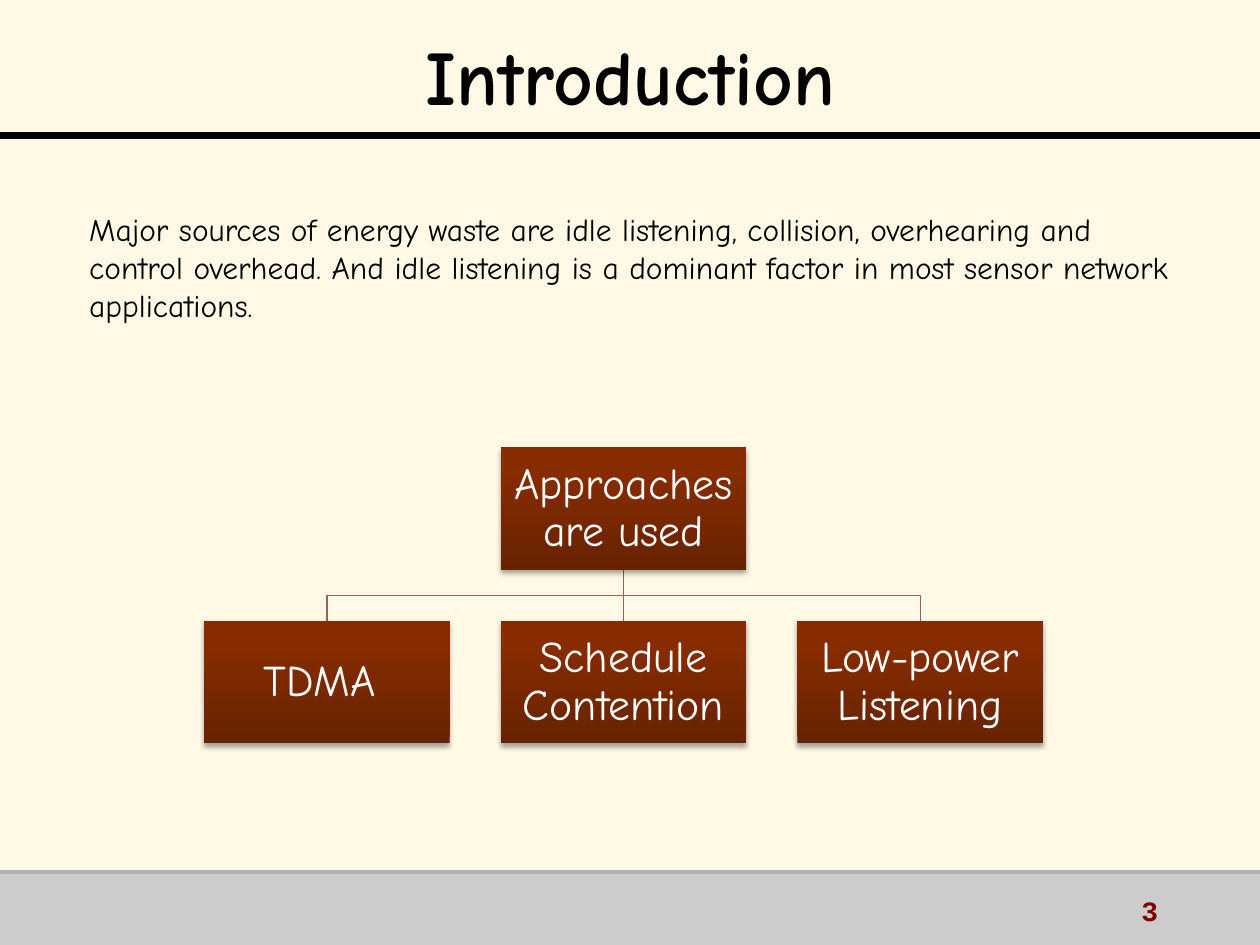
import pptx
import pptx.dml.color
import pptx.enum.shapes
import pptx.enum.text
import pptx.oxml
import pptx.oxml.ns
import pptx.util
from pptx.util import Cm

RGBColor = pptx.dml.color.RGBColor
CREAM = RGBColor(0xFF, 0xF9, 0xE6)
BLACK = RGBColor(0, 0, 0)
WHITE = RGBColor(0xFF, 0xFF, 0xFF)
FOOTER_GREY = RGBColor(0xCC, 0xCC, 0xCC)
RULE_GREY = RGBColor(0xB2, 0xB2, 0xB2)
BRANCH_BROWN = RGBColor(0x99, 0x61, 0x5A)
DARK_RUST = RGBColor(0x67, 0x22, 0x00)
RUST = RGBColor(0x86, 0x2C, 0x00)
MAROON = RGBColor(0x80, 0, 0)

FONT = "Comic Neue"
SLIDE_WIDTH, SLIDE_HEIGHT = Cm(25.4), Cm(19.05)
FOOTER_TOP = Cm(17.58)
BOX_WIDTH, BOX_HEIGHT = Cm(4.95), Cm(2.47)
BOX_PITCH = Cm(5.98)
FIRST_CENTER = Cm(6.59)
ROOT_TOP, CHILD_TOP = Cm(9.02), Cm(12.52)

ROOT_LABEL = "Approaches are used"
CHILD_LABELS = ["TDMA\t", "Schedule Contention", "Low-power Listening"]
BODY_TEXT = (
    "Major sources of energy waste are idle listening, collision, overhearing and "
    "control overhead. And idle listening is a dominant factor in most sensor "
    "network applications."
)
SHADOW_XML = (
    '<a:outerShdw %s blurRad="39370" dist="22860" dir="5400000" rotWithShape="0">'
    '<a:srgbClr val="000000"><a:alpha val="35000"/></a:srgbClr></a:outerShdw>'
    % pptx.oxml.ns.nsdecls("a")
)


def write_text(text_frame, text, size, color, font=FONT, bold=False):
    """Fill the first paragraph with one run and return the paragraph."""
    text_frame.word_wrap = True
    paragraph = text_frame.paragraphs[0]
    run = paragraph.add_run()
    run.text = text
    run.font.name = font
    run.font.size = pptx.util.Pt(size)
    run.font.bold = bold
    run.font.color.rgb = color
    return paragraph


def add_title(slide, text):
    title = slide.shapes.title
    title.left, title.top, title.width, title.height = Cm(1.91), Cm(0), Cm(21.59), Cm(2.84)
    title.text_frame.auto_size = pptx.enum.text.MSO_AUTO_SIZE.NONE
    title.text_frame.vertical_anchor = pptx.enum.text.MSO_ANCHOR.MIDDLE
    paragraph = write_text(title.text_frame, text, 44, BLACK, bold=True)
    paragraph.alignment = pptx.enum.text.PP_ALIGN.CENTER
    paragraph.line_spacing = 1.1


def add_text_box(slide, left, top, width, height, text, size, color, **style):
    text_box = slide.shapes.add_textbox(left, top, width, height)
    write_text(text_box.text_frame, text, size, color, **style)


def add_line(slide, start, end, color, width):
    line = slide.shapes.add_connector(
        pptx.enum.shapes.MSO_CONNECTOR.STRAIGHT, *start, *end)
    line.line.color.rgb = color
    line.line.width = pptx.util.Pt(width)
    pptx.oxml.ns.qn("a:effectLst")
    line._element.spPr.append(
        pptx.oxml.parse_xml("<a:effectLst %s/>" % pptx.oxml.ns.nsdecls("a")))


def add_rectangle(slide, left, top, width, height):
    shape = slide.shapes.add_shape(
        pptx.enum.shapes.MSO_SHAPE.RECTANGLE, left, top, width, height)
    shape.line.fill.background()
    shape.shadow.inherit = False
    return shape


def add_footer_band(slide):
    band = add_rectangle(slide, 0, FOOTER_TOP, SLIDE_WIDTH, SLIDE_HEIGHT - FOOTER_TOP)
    band.fill.solid()
    band.fill.fore_color.rgb = FOOTER_GREY


def add_chart_box(slide, center, top, label):
    """Add a shaded, labelled organisation box centred on the given x."""
    box = add_rectangle(slide, center - BOX_WIDTH // 2, top, BOX_WIDTH, BOX_HEIGHT)
    box.fill.gradient()
    box.fill.gradient_angle = 90
    stops = zip(box.fill.gradient_stops, [(0, DARK_RUST), (0.8, RUST)])
    for stop, (position, color) in stops:
        stop.position = position
        stop.color.rgb = color
    effects = box._element.spPr.find(pptx.oxml.ns.qn("a:effectLst"))
    effects.append(pptx.oxml.parse_xml(SHADOW_XML))

    frame = box.text_frame
    frame.margin_left = frame.margin_right = Cm(0.05)
    frame.margin_top = frame.margin_bottom = Cm(0.05)
    frame.vertical_anchor = pptx.enum.text.MSO_ANCHOR.MIDDLE
    paragraph = write_text(frame, label, 25, WHITE)
    paragraph.alignment = pptx.enum.text.PP_ALIGN.CENTER
    paragraph.line_spacing = 0.9


def add_branch(slide, parent_center, child_center):
    """Join the root box to a child box, with a bend if they are not aligned."""
    start, end = (parent_center, ROOT_TOP + BOX_HEIGHT), (child_center, CHILD_TOP)
    if parent_center == child_center:
        add_line(slide, start, end, BRANCH_BROWN, 0.75)
        return
    middle = (start[1] + end[1]) // 2
    builder = slide.shapes.build_freeform(*start)
    builder.add_line_segments(
        [(parent_center, middle), (child_center, middle), end], close=False)
    branch = builder.convert_to_shape()
    branch.fill.background()
    branch.line.color.rgb = BRANCH_BROWN
    branch.line.width = pptx.util.Pt(0.75)
    branch.shadow.inherit = False


def add_organisation_chart(slide):
    centers = [FIRST_CENTER + index * BOX_PITCH for index in range(len(CHILD_LABELS))]
    root_center = centers[len(centers) // 2]
    for center in centers:
        add_branch(slide, root_center, center)
    add_chart_box(slide, root_center, ROOT_TOP, ROOT_LABEL)
    for center, label in zip(centers, CHILD_LABELS):
        add_chart_box(slide, center, CHILD_TOP, label)


def main():
    presentation = pptx.Presentation()
    presentation.slide_width, presentation.slide_height = SLIDE_WIDTH, SLIDE_HEIGHT
    slide = presentation.slides.add_slide(presentation.slide_layouts[5])
    slide.background.fill.solid()
    slide.background.fill.fore_color.rgb = CREAM

    add_footer_band(slide)
    add_line(slide, (0, Cm(2.74)), (SLIDE_WIDTH, Cm(2.74)), BLACK, 4)
    add_line(slide, (0, FOOTER_TOP), (SLIDE_WIDTH, FOOTER_TOP), RULE_GREY, 2)
    add_title(slide, "Introduction")
    add_text_box(slide, Cm(1.55), Cm(4.11), Cm(22.68), Cm(3.33), BODY_TEXT, 18, BLACK)
    add_organisation_chart(slide)
    add_text_box(slide, Cm(22.76), Cm(17.88), Cm(2.54), Cm(0.64), "3", 16, MAROON,
                 font="Courier New", bold=True)
    presentation.save("out.pptx")


if __name__ == "__main__":
    main()
